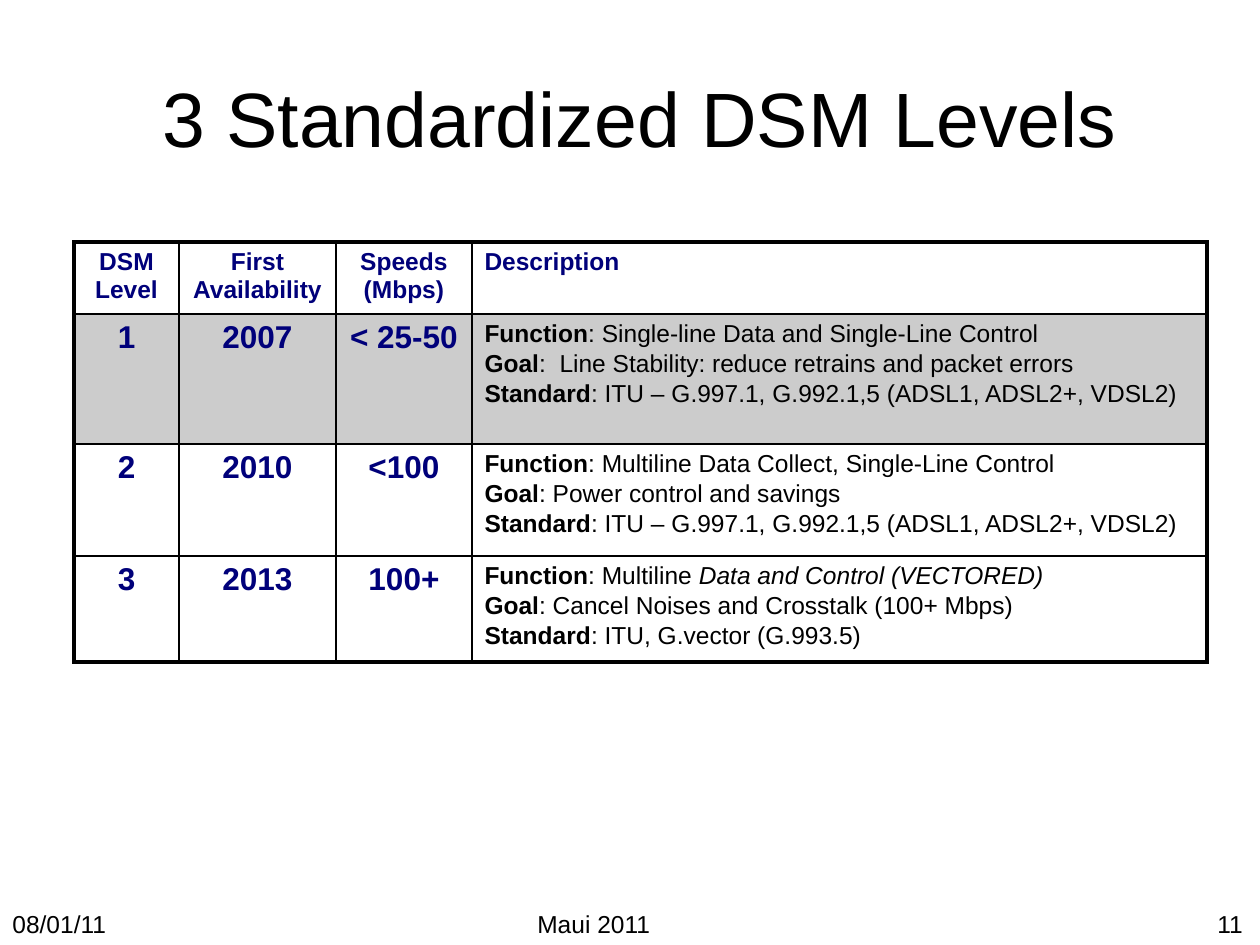
from lxml.etree import SubElement as Sub
from pptx import Presentation
from pptx.dml.color import RGBColor as Rgb
from pptx.enum.text import MSO_ANCHOR as Anchor, PP_ALIGN as Align
from pptx.oxml.ns import qn
from pptx.util import Pt

SCALE = 914400 / 126
HUES = {"ink": "000000", "navy": "00007A", "gray": "CCCCCC"}
COLS = [105, 157, 136, 735]
ROWS = [72, 130, 112, 106]
HEADS = ["DSM Level", "First Availability", "Speeds (Mbps)", "Description"]
# Level, year, speed, then function, goal and standard; a third part is italic
LEVELS = [
    ("1", "2007", "< 25-50", [
        ("Function", ": Single-line Data and Single-Line Control"),
        ("Goal", ":  Line Stability: reduce retrains and packet errors"),
        ("Standard", ": ITU – G.997.1, G.992.1,5 (ADSL1, ADSL2+, VDSL2)")]),
    ("2", "2010", "<100", [
        ("Function", ": Multiline Data Collect, Single-Line Control"),
        ("Goal", ": Power control and savings"),
        ("Standard", ": ITU – G.997.1, G.992.1,5 (ADSL1, ADSL2+, VDSL2)")]),
    ("3", "2013", "100+", [
        ("Function", ": Multiline ", "Data and Control (VECTORED)"),
        ("Goal", ": Cancel Noises and Crosstalk (100+ Mbps)"),
        ("Standard", ": ITU, G.vector (G.993.5)")]),
]


def px(n):
    return round(n * SCALE)


def write(frame, lines, size=14, hue="ink", bold=False, align=Align.LEFT,
          gap=0, lead=False):
    """Fill a frame; each line is a tuple of runs, lead makes the first bold."""
    for i, runs in enumerate(lines):
        para = frame.paragraphs[0] if i == 0 else frame.add_paragraph()
        para.alignment = align
        para.space_before = Pt(gap if i else 0)
        for j, text in enumerate(runs):
            run = para.add_run()
            run.text = text
            font = run.font
            font.name, font.size = "Arial", Pt(size)
            font.bold = bold or (lead and j == 0)
            font.italic = j == 2
            font.color.rgb = Rgb.from_string(HUES[hue])


def label(slide, box, text, wrap=False, anchor=Anchor.TOP, **form):
    frame = slide.shapes.add_textbox(*map(px, box)).text_frame
    frame.word_wrap = wrap
    frame.vertical_anchor = anchor
    write(frame, [(text,)], **form)


def edge(cell, widths):
    """Draw the four borders ahead of the fill element."""
    props = cell._tc.get_or_add_tcPr()
    for k, (side, width) in enumerate(widths.items()):
        line = Sub(props, qn("a:ln" + side), w=str(Pt(width)))
        fill = Sub(line, qn("a:solidFill"))
        Sub(fill, qn("a:srgbClr"), val=HUES["ink"])
        props.insert(k, line)


def grid(slide, left, top):
    shape = slide.shapes.add_table(len(ROWS), len(COLS), px(left), px(top),
                                   px(sum(COLS)), px(sum(ROWS)))
    table = shape.table
    table.first_row = table.horz_banding = False
    for col, width in zip(table.columns, COLS):
        col.width = px(width)
    for row, height in zip(table.rows, ROWS):
        row.height = px(height)

    for r, items in enumerate([HEADS, *LEVELS]):
        for c, item in enumerate(items):
            cell = table.cell(r, c)
            last = c == len(COLS) - 1
            if r == 1:
                cell.fill.solid()
                cell.fill.fore_color.rgb = Rgb.from_string(HUES["gray"])
            else:
                cell.fill.background()
            # Heavy frame, thin inner lines
            outer = {"L": c == 0, "R": last, "T": r == 0,
                     "B": r == len(ROWS) - 1}
            edge(cell, {s: 2.25 if out else 1 for s, out in outer.items()})
            if r and last:
                write(cell.text_frame, item, gap=1.4, lead=True)
            else:
                write(cell.text_frame, [(item,)], size=18 if r else 14,
                      hue="navy", bold=True,
                      align=Align.LEFT if last else Align.CENTER)


def footer(slide, top):
    label(slide, (0, top, 121, 42), "08/01/11")
    label(slide, (525, top, 139, 42), "Maui 2011")
    label(slide, (1205, top, 55, 42), "11")


def main():
    deck = Presentation()
    deck.slide_width, deck.slide_height = px(1260), px(945)
    slide = deck.slides.add_slide(deck.slide_layouts[6])
    footer(slide, 903)
    grid(slide, 74, 242)
    # Title
    label(slide, (84, 38, 1112, 157), "3 Standardized DSM Levels", wrap=True,
          anchor=Anchor.MIDDLE, size=44, align=Align.CENTER)
    deck.save("out.pptx")


if __name__ == "__main__":
    main()
